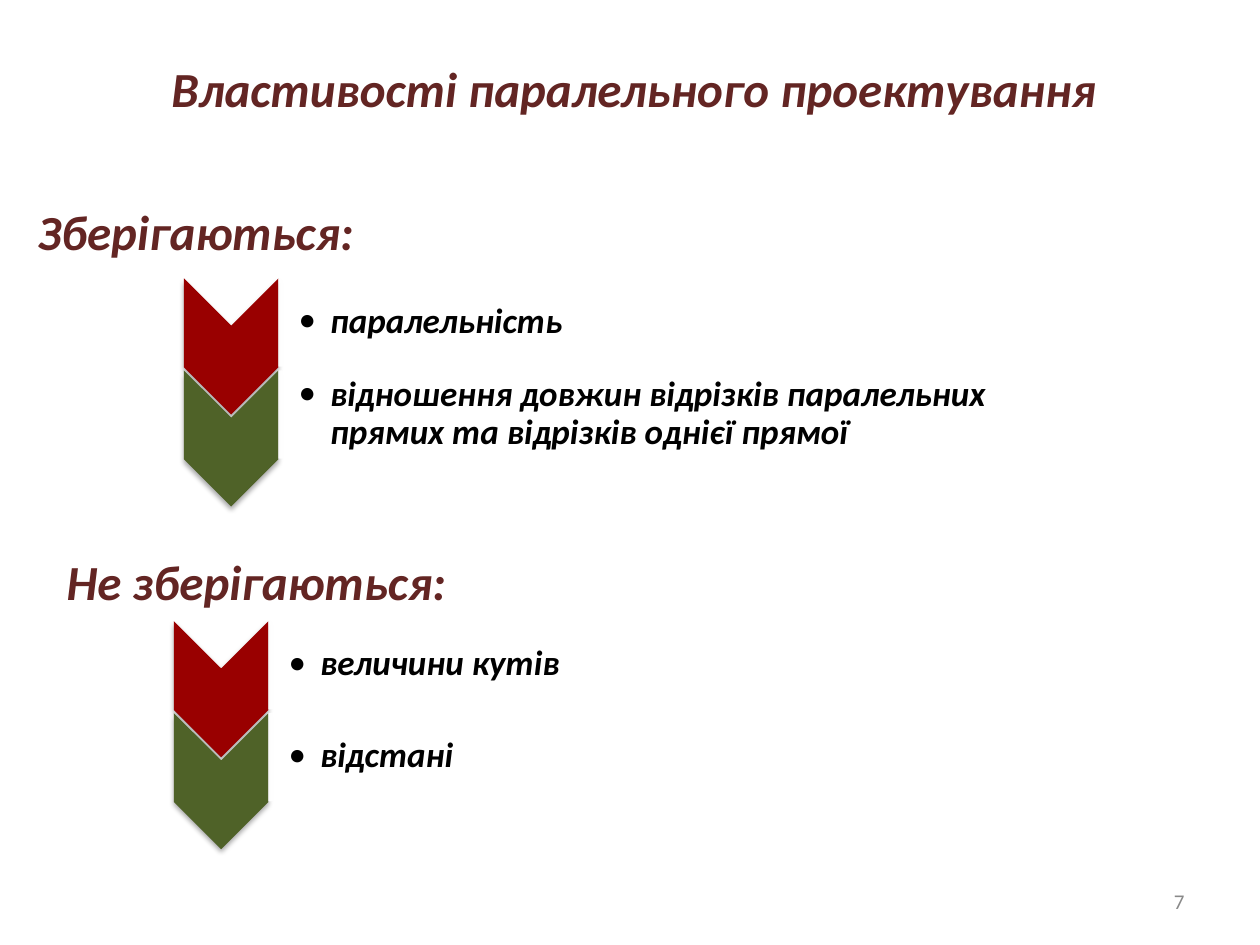
from pptx import Presentation
from pptx.dml.color import RGBColor as Rgb
from pptx.enum.shapes import MSO_SHAPE as Shape
from pptx.enum.text import MSO_ANCHOR as Anchor, PP_ALIGN as Align
from pptx.oxml import parse_xml
from pptx.oxml.ns import nsdecls
from pptx.util import Inches as In, Pt

HUES = {"head": "632523", "red": "990000", "green": "4F6228",
        "text": "000000", "page": "898989", "panel": "FFFFFF"}
STEP, LONG, WIDE = 0.73, 1.08, 0.75  # row pitch, chevron length and width


def style(para, size, hue, bold=True):
    font = para.font
    font.name, font.size = "Calibri", Pt(size)
    font.bold = font.italic = bold
    font.color.rgb = Rgb.from_string(HUES[hue])


def add_text(slide, box, text, size, hue, bold=True):
    frame = slide.shapes.add_textbox(*map(In, box)).text_frame
    frame.word_wrap = True
    para = frame.paragraphs[0]
    para.text = text
    style(para, size, hue, bold)
    return frame


def add_title(slide, box, text):
    title = slide.shapes.title
    title.left, title.top, title.width, title.height = map(In, box)
    frame = title.text_frame
    frame.text = text
    frame.vertical_anchor = Anchor.MIDDLE
    para = frame.paragraphs[0]
    para.alignment = Align.CENTER
    style(para, 28, "head")


def add_turned(slide, kind, box, hue):
    # Fills the upright box with a shape turned a quarter about its centre
    left, top, width, height = box
    turn = (height - width) / 2
    shape = slide.shapes.add_shape(
        kind, In(left - turn), In(top + turn), In(height), In(width))
    shape.rotation = 90
    shape.shadow.inherit = False
    shape.fill.solid()
    shape.fill.fore_color.rgb = Rgb.from_string(HUES[hue])
    shape.line.fill.background()
    return shape


def add_arrow(slide, left, top, hue):
    arrow = add_turned(slide, Shape.CHEVRON, (left, top, WIDE, LONG), hue)
    effects = arrow._element.spPr.find(
        "{http://schemas.openxmlformats.org/drawingml/2006/main}effectLst")
    effects.append(parse_xml(
        f'<a:outerShdw {nsdecls("a")} blurRad="{Pt(3.1)}" '
        f'dist="{Pt(1.8)}" dir="5400000" rotWithShape="0">'
        '<a:srgbClr val="000000"><a:alpha val="35000"/></a:srgbClr>'
        '</a:outerShdw>'))


def add_panel(slide, box):
    panel = add_turned(slide, Shape.ROUND_2_SAME_RECTANGLE, box, "panel")
    color = panel._element.spPr.xpath("./a:solidFill/a:srgbClr")[0]
    color.append(parse_xml(f'<a:alpha {nsdecls("a")} val="90000"/>'))


def add_item(slide, box, text):
    frame = add_text(slide, box, text, 20, "text")
    frame.vertical_anchor = Anchor.MIDDLE
    frame.margin_left = In(0.16)
    frame.margin_right = frame.margin_top = frame.margin_bottom = In(0.01)
    para = frame.paragraphs[0]
    props = para._p.get_or_add_pPr()
    props.set("marL", str(In(0.25)))
    props.set("indent", str(-In(0.25)))
    for pos, mark in enumerate(('buFont {} typeface="Calibri"',
                                'buChar {} char="•"')):
        props.insert(pos, parse_xml(f'<a:{mark.format(nsdecls("a"))}/>'))
    para.line_spacing = 0.9


def add_list(slide, left, top, items):
    # One chevron, panel and bullet a row
    for row, (hue, text) in enumerate(zip(("red", "green"), items)):
        x, y = left + WIDE, top + row * STEP
        add_arrow(slide, left, y, hue)
        add_panel(slide, (x, y, 6.41, 0.7))
        add_item(slide, (x, y + 0.03, 6.38, 0.63), text)


def main():
    deck = Presentation()
    deck.slide_width, deck.slide_height = In(10), In(7.5)
    slide = deck.slides.add_slide(deck.slide_layouts[5])

    add_title(slide, (0.53, 0.07, 9, 1.25),
              "Властивості паралельного проектування")

    # Properties that are kept
    add_text(slide, (0.2, 1.55, 4.02, 0.57), "Зберігаються:", 28, "head")
    add_list(slide, 1.46, 2.21, (
        "паралельність",
        "відношення довжин відрізків паралельних прямих "
        "та відрізків однієї прямої"))

    # Properties that are lost
    add_text(slide, (0.43, 4.33, 4.02, 0.57), "Не зберігаються:", 28, "head")
    add_list(slide, 1.38, 4.93, ("величини кутів", "відстані"))

    # Page number
    page = add_text(slide, (7.17, 6.95, 2.33, 0.4), "7", 12, "page", False)
    page.vertical_anchor = Anchor.MIDDLE
    page.paragraphs[0].alignment = Align.RIGHT

    deck.save("out.pptx")


if __name__ == "__main__":
    main()
